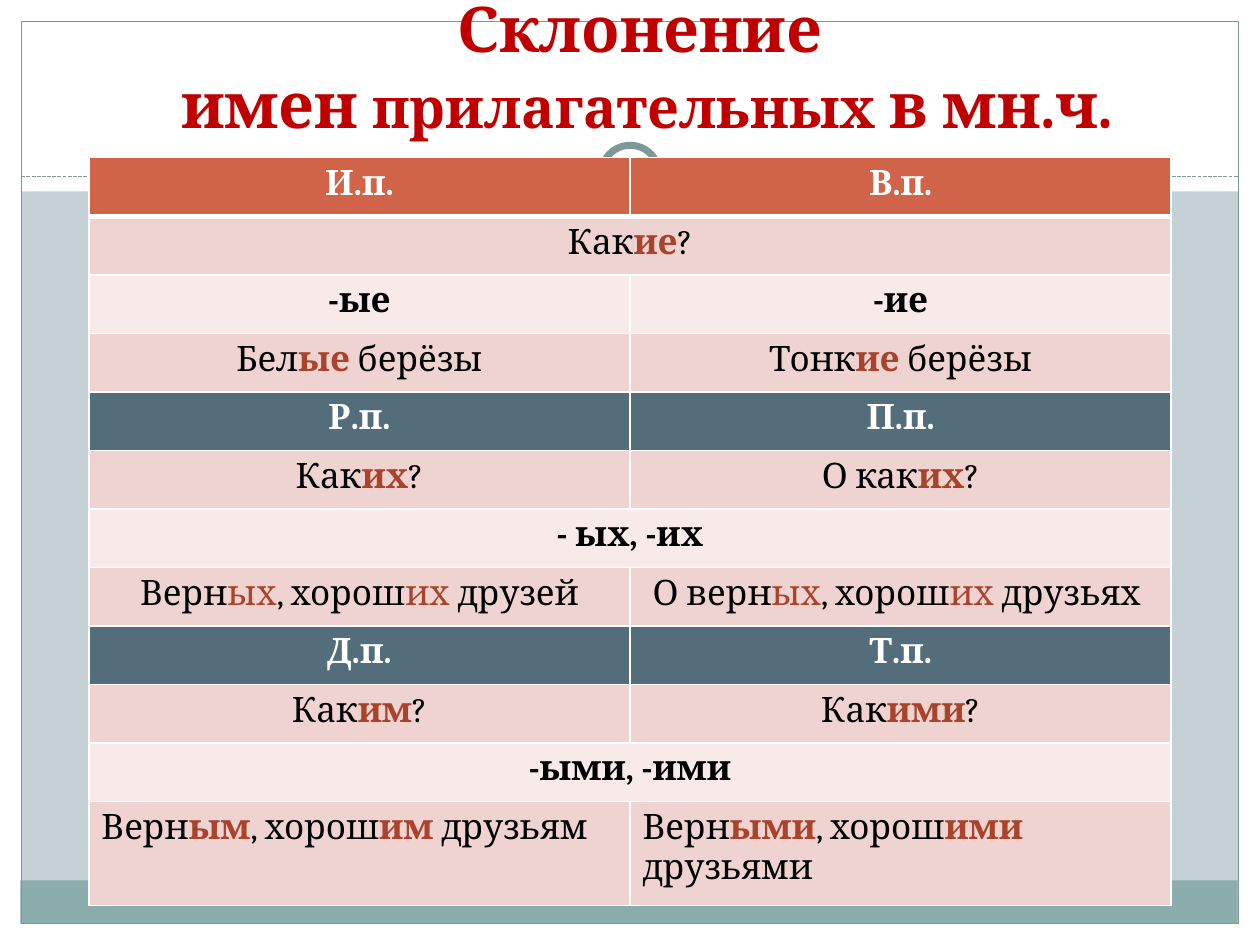
from lxml.etree import SubElement
from pptx import Presentation
from pptx.dml.color import RGBColor
from pptx.enum.dml import MSO_LINE
from pptx.enum.shapes import MSO_CONNECTOR, MSO_SHAPE
from pptx.enum.text import MSO_ANCHOR, MSO_AUTO_SIZE, PP_ALIGN
from pptx.oxml import parse_xml
from pptx.oxml.ns import nsdecls, qn
from pptx.util import Cm, Pt

HUES = {
    "back": "C5D1D7", "white": "FFFFFF", "black": "000000",
    "band": "8CADAE", "edge": "7C999A", "title": "C00000",
    "mark": "A9432B", "head": "D16349", "case": "546D7A",
    "rose": "EED3D0", "pale": "F7EAE9",
}
FONT = "Cambria"

TITLE = [("Склонение ", 36), None, ("имен ", 36),
         ("прилагательных", 32), (" в мн.ч.", 36)]

STYLES = {
    "head": ("head", "white", True, True),
    "case": ("case", "white", True, True),
    "ends": ("pale", "black", True, True),
    "text": ("rose", "black", False, True),
    "thin": ("rose", "black", False, False),
}

ROWS = [
    ("head", "И.п.", "В.п."),
    ("text", "Как*ие*?"),
    ("ends", "-ые", "-ие"),
    ("text", "Бел*ые *берёзы", "Тонк*ие* берёзы"),
    ("case", "Р.п.", "П.п."),
    ("text", "Как*их*?", "О как*их*?"),
    ("ends", "- ых, -их"),
    ("thin", "Верн*ых*, хорош*их* друзей", "О верн*ых*, хорош*их* друзьях "),
    ("case", "Д.п.", "Т.п."),
    ("text", "Как*им*?", "Как*ими*?"),
    ("ends", "-ыми, -ими"),
    ("text", "Верн*ым*, хорош*им* друзьям", "Верн*ыми*, хорош*ими* друзьями"),
]

WIDE, HIGH, RIM = 25.4, 19.05, 0.43
PANELS = [
    ("RECTANGLE", 0, HIGH - RIM, WIDE, RIM, "white", None),
    ("RECTANGLE", 0, 0, WIDE, 3.86, "white", None),
    ("RECTANGLE", 0, 0, RIM, HIGH, "white", None),
    ("RECTANGLE", WIDE - RIM, 0, RIM, HIGH, "white", None),
    ("RECTANGLE", 0.41, 17.75, 24.54, 0.87, "band", None),
    ("RECTANGLE", RIM, RIM, WIDE - 2 * RIM, HIGH - 2 * RIM, None, 0.75),
]
RINGS = [
    ("OVAL", 11.85, 2.67, 1.7, 1.7, "white", None),
    ("OVAL", 12.12, 2.93, 1.17, 1.17, "white", 4),
]


def tint(name):
    return RGBColor.from_string(HUES[name])


def paint(fill, name):
    fill.solid()
    fill.fore_color.rgb = tint(name)


def write(para, text, size, hue, bold):
    run = para.add_run()
    run.text = text
    font = run.font
    font.name, font.size, font.bold = FONT, Pt(size), bold
    font.color.rgb = tint(hue)


def panel(slide, kind, left, top, width, height, fill, line):
    shape = slide.shapes.add_shape(
        MSO_SHAPE[kind], Cm(left), Cm(top), Cm(width), Cm(height))
    shape.shadow.inherit = False
    if fill:
        paint(shape.fill, fill)
    else:
        shape.fill.background()
    if line:
        shape.line.color.rgb = tint("edge")
        shape.line.width = Pt(line)
    else:
        shape.line.fill.background()


def rule(slide):
    line = slide.shapes.add_connector(
        MSO_CONNECTOR.STRAIGHT, Cm(RIM), Cm(3.56), Cm(WIDE - RIM), Cm(3.56))
    line.line.color.rgb = tint("edge")
    line.line.width = Pt(0.75)
    line.line.dash_style = MSO_LINE.SQUARE_DOT
    props = line.element.find(qn("p:spPr"))
    props.find(qn("a:ln")).find(qn("a:prstDash")).set("val", "sysDash")
    SubElement(props, qn("a:effectLst"))


def head(slide):
    title = slide.shapes.title
    title.element.getparent().append(title.element)
    title.left, title.top = Cm(1.57), Cm(0)
    title.width, title.height = Cm(22.94), Cm(2.97)
    frame = title.text_frame
    frame.word_wrap = True
    frame.auto_size = MSO_AUTO_SIZE.NONE
    frame.vertical_anchor = MSO_ANCHOR.BOTTOM
    para = frame.paragraphs[0]
    para.alignment = PP_ALIGN.CENTER
    for part in TITLE:
        if part:
            write(para, *part, "title", True)
        else:
            para.add_line_break()


def border(cell, base):
    props = cell._tc.get_or_add_tcPr()
    for spot, side in enumerate("LRTB"):
        width = Pt(base if side == "B" else 1)
        props.insert(spot, parse_xml(
            f'<a:ln{side} {nsdecls("a")} w="{width}"><a:solidFill>'
            f'<a:srgbClr val="{HUES["white"]}"/></a:solidFill></a:ln{side}>'))


def grid(slide):
    table = slide.shapes.add_table(
        len(ROWS), 2, Cm(1.79), Cm(3.18), Cm(21.82), Cm(15.07)).table
    table.horz_banding = False
    last = len(ROWS) - 1
    for num, (style, *texts) in enumerate(ROWS):
        table.rows[num].height = Cm(2.09 if num == last else 1.18)
        fill, hue, bold, strong = STYLES[style]
        for col in range(2):
            cell = table.cell(num, col)
            paint(cell.fill, fill)
            border(cell, 3 if style == "head" else 1)
        if len(texts) == 1:
            table.cell(num, 0).merge(table.cell(num, 1))
        for col, text in enumerate(texts):
            para = table.cell(num, col).text_frame.paragraphs[0]
            para.alignment = PP_ALIGN.LEFT if num == last else PP_ALIGN.CENTER
            for spot, part in enumerate(text.split("*")):
                if spot % 2:
                    write(para, part, 20, "mark", strong)
                else:
                    write(para, part, 20, hue, bold)


def main():
    deck = Presentation()
    deck.slide_width, deck.slide_height = Cm(WIDE), Cm(HIGH)
    slide = deck.slides.add_slide(deck.slide_layouts[5])
    paint(slide.background.fill, "back")
    for item in PANELS:
        panel(slide, *item)
    rule(slide)
    for item in RINGS:
        panel(slide, *item)
    head(slide)
    grid(slide)
    deck.save("out.pptx")


if __name__ == "__main__":
    main()
